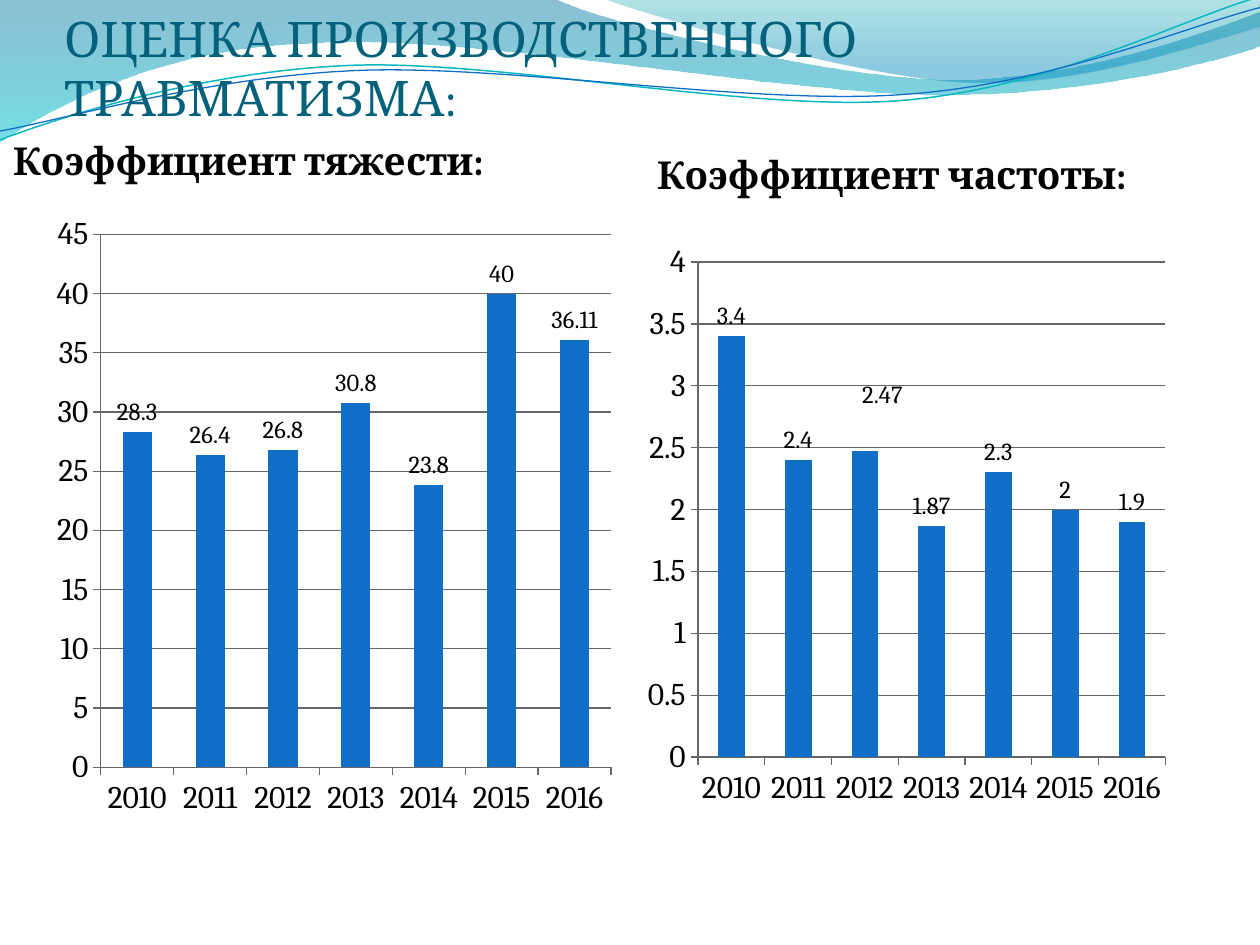
"""Build a slide comparing injury severity and frequency rates in two column charts."""
import lxml.etree
import pptx
import pptx.chart.data
import pptx.dml.color
import pptx.enum.chart
import pptx.enum.text
import pptx.oxml.ns
import pptx.util

Inches = pptx.util.Inches
Pt = pptx.util.Pt
qn = pptx.oxml.ns.qn

THEME = {
    "font": "Cambria", "title": "04617B", "text": "000000", "bar": "0F6FC6", "grid": "666666",
    "title_size": 28, "heading_size": 22, "axis_size": 18, "label_size": 14,
}
TITLE = "ОЦЕНКА ПРОИЗВОДСТВЕННОГО ТРАВМАТИЗМА:"
YEARS = [str(year) for year in range(2010, 2017)]
CHARTS = [
    {"heading": "Коэффициент тяжести:", "box": (0, 0.99, 4.93, 6.46),
     "values": (28.3, 26.4, 26.8, 30.8, 23.8, 40, 36.11), "maximum": 45, "step": 5,
     "heading_at": (0.05, 0.04), "plot": (0.8, 0.87, 4.05, 4.23), "moved": {}},
    {"heading": "Коэффициент частоты:", "box": (5.08, 1.07, 4.92, 6.3),
     "values": (3.4, 2.4, 2.47, 1.87, 2.3, 2, 1.9), "maximum": 4, "step": 0.5,
     "heading_at": (0.08, 0.07), "plot": (0.46, 1.01, 3.71, 3.93), "moved": {2: (0.14, -0.29)}},
]
WAVES = [
    {"outline": [(0, 0), (4.4, -0.01), (4.76, 0.17, 6.64, 0.63, 7.58, 0.63),
                 (8.53, 0.63, 9.58, 0.26, 10, 0.09), (10.01, 0.36),
                 (9.83, 0.44, 8.7, 0.76, 7.46, 0.75), (6.22, 0.75, 3.82, 0.28, 2.57, 0.34),
                 (1.29, 0.36, 0.46, 0.83, -0.01, 1.13)],
     "stops": [(0, "0074A1", 45), (1, "00C6CF", 55)]},
    {"outline": [(4.79, -0.01), (5.09, 0.11, 6.82, 0.62, 7.69, 0.65),
                 (8.56, 0.69, 9.61, 0.32, 10, 0.21), (10, 0)],
     "stops": [(0, "00A1A9", 30), (0.8, "008BBF", 45)]},
    {"outline": [(0, 1.11), (0.48, 0.93, 1.58, 0.57, 2.77, 0.52),
                 (3.95, 0.47, 5.93, 0.89, 7.13, 0.8), (8.33, 0.71, 9.38, 0.15, 9.98, -0.02)],
     "line": ("0AB8BF", 0.85)},
    {"outline": [(0, 1.04), (0.47, 0.96, 1.64, 0.61, 2.83, 0.56),
                 (4.03, 0.51, 5.97, 0.84, 7.17, 0.75), (8.36, 0.67, 9.41, 0.21, 10, 0.06)],
     "line": ("0F6FC6", 0.75)},
]
UNITS_PER_INCH = 1000


def rgb(value):
    return pptx.dml.color.RGBColor.from_string(value)


def style_font(font, size, color=THEME["text"], bold=False):
    font.name, font.size, font.bold = THEME["font"], Pt(size), bold
    font.color.rgb = rgb(color)


def add_outline(slide, outline, closed):
    segments = [[round(value * UNITS_PER_INCH) for value in segment] for segment in outline]
    anchors = [segment[-2:] for segment in segments]
    builder = slide.shapes.build_freeform(*anchors[0], scale=Inches(1) / UNITS_PER_INCH)
    builder.add_line_segments(anchors[1:], close=closed)
    shape = builder.convert_to_shape()
    left, top = (min(anchor[axis] for anchor in anchors) for axis in (0, 1))
    lines = list(shape.element.iter(qn("a:lnTo")))
    for line, segment in zip(lines, segments[1:]):
        if len(segment) == 2:
            continue
        curve = lxml.etree.Element(qn("a:cubicBezTo"))
        for x, y in zip(segment[::2], segment[1::2]):
            point = lxml.etree.SubElement(curve, qn("a:pt"))
            point.set("x", str(x - left))
            point.set("y", str(y - top))
        line.getparent().replace(line, curve)
    return shape


def add_wave(slide, wave):
    shape = add_outline(slide, wave["outline"], "stops" in wave)
    shape.shadow.inherit = False
    if "line" in wave:
        color, width = wave["line"]
        shape.fill.background()
        shape.line.color.rgb = rgb(color)
        shape.line.width = Pt(width)
        return
    shape.line.fill.background()
    shape.fill.gradient()
    shape.fill.gradient_angle = 270
    for stop, (position, color, opacity) in zip(shape.fill.gradient_stops, wave["stops"]):
        stop.position = position
        stop.color.rgb = rgb(color)
    colors = shape.element.spPr.iter(qn("a:srgbClr"))
    for element, (position, color, opacity) in zip(colors, wave["stops"]):
        lxml.etree.SubElement(element, qn("a:alpha")).set("val", str(opacity * 1000))


def place(parent, index, box, inches, modes=()):
    for old in parent.findall(qn("c:layout")):
        parent.remove(old)
    layout = lxml.etree.Element(qn("c:layout"))
    manual = lxml.etree.SubElement(layout, qn("c:manualLayout"))
    width, height = box[2:]
    shares = [value / side for value, side in zip(inches, (width, height) * 2)]
    for name, value in [*modes, *zip("xywh", shares)]:
        lxml.etree.SubElement(manual, qn("c:" + name)).set("val", str(value))
    parent.insert(index, layout)


def style_axis(axis):
    style_font(axis.tick_labels.font, THEME["axis_size"])
    axis.major_tick_mark = pptx.enum.chart.XL_TICK_MARK.OUTSIDE
    axis.format.line.color.rgb = rgb(THEME["grid"])


def add_labels(series, content):
    outside = pptx.enum.chart.XL_LABEL_POSITION.OUTSIDE_END
    labels = series.data_labels
    labels.show_value, labels.position = True, outside
    style_font(labels.font, THEME["label_size"])
    leader = labels._element.find(qn("c:showLeaderLines"))
    if leader is None:
        leader = lxml.etree.SubElement(labels._element, qn("c:showLeaderLines"))
    leader.set("val", "0")
    for index, shift in content["moved"].items():
        label = series.points[index].data_label
        label.position = outside
        style_font(label.font, THEME["label_size"])
        place(labels._element.find(qn("c:dLbl")), 1, content["box"], shift)


def add_column_chart(slide, content):
    data = pptx.chart.data.CategoryChartData()
    data.categories = YEARS
    data.add_series("Series 1", content["values"])
    kind = pptx.enum.chart.XL_CHART_TYPE.COLUMN_CLUSTERED
    chart = slide.shapes.add_chart(kind, *map(Inches, content["box"]), data).chart
    style_font(chart.font, THEME["axis_size"])
    chart.has_legend = False

    heading = chart.chart_title
    run = heading.text_frame.paragraphs[0].add_run()
    run.text = content["heading"]
    style_font(run.font, THEME["heading_size"], bold=True)
    edges = [("xMode", "edge"), ("yMode", "edge")]
    place(heading._element, 1, content["box"], content["heading_at"], edges)
    place(chart._chartSpace.chart.plotArea, 0, content["box"], content["plot"],
          [("layoutTarget", "inner"), *edges])

    style_axis(chart.category_axis)
    axis = chart.value_axis
    style_axis(axis)
    axis.minimum_scale, axis.maximum_scale = 0, content["maximum"]
    axis.major_unit = content["step"]
    axis.has_major_gridlines = True
    axis.major_gridlines.format.line.color.rgb = rgb(THEME["grid"])

    plot = chart.plots[0]
    plot.gap_width, plot.vary_by_categories = 150, False
    series = plot.series[0]
    series.format.fill.solid()
    series.format.fill.fore_color.rgb = rgb(THEME["bar"])
    add_labels(series, content)


def add_title(slide):
    title = slide.shapes.title
    title.left, title.top, title.width, title.height = map(Inches, (0.51, 0.21, 9, 0.79))
    frame = title.text_frame
    frame.margin_left = frame.margin_right = frame.margin_bottom = 0
    frame.margin_top = Inches(0.05)
    frame.word_wrap = True
    frame.auto_size = pptx.enum.text.MSO_AUTO_SIZE.NONE
    frame.vertical_anchor = pptx.enum.text.MSO_ANCHOR.BOTTOM
    paragraph = frame.paragraphs[0]
    paragraph.alignment = pptx.enum.text.PP_ALIGN.LEFT
    run = paragraph.add_run()
    run.text = TITLE
    style_font(run.font, THEME["title_size"], THEME["title"])


def main():
    presentation = pptx.Presentation()
    presentation.slide_width, presentation.slide_height = Inches(10), Inches(7.5)
    slide = presentation.slides.add_slide(presentation.slide_layouts[5])
    for wave in WAVES:
        add_wave(slide, wave)
    slide.shapes._spTree.append(slide.shapes.title._element)
    add_title(slide)
    for content in CHARTS:
        add_column_chart(slide, content)
    presentation.save("out.pptx")


if __name__ == "__main__":
    main()
